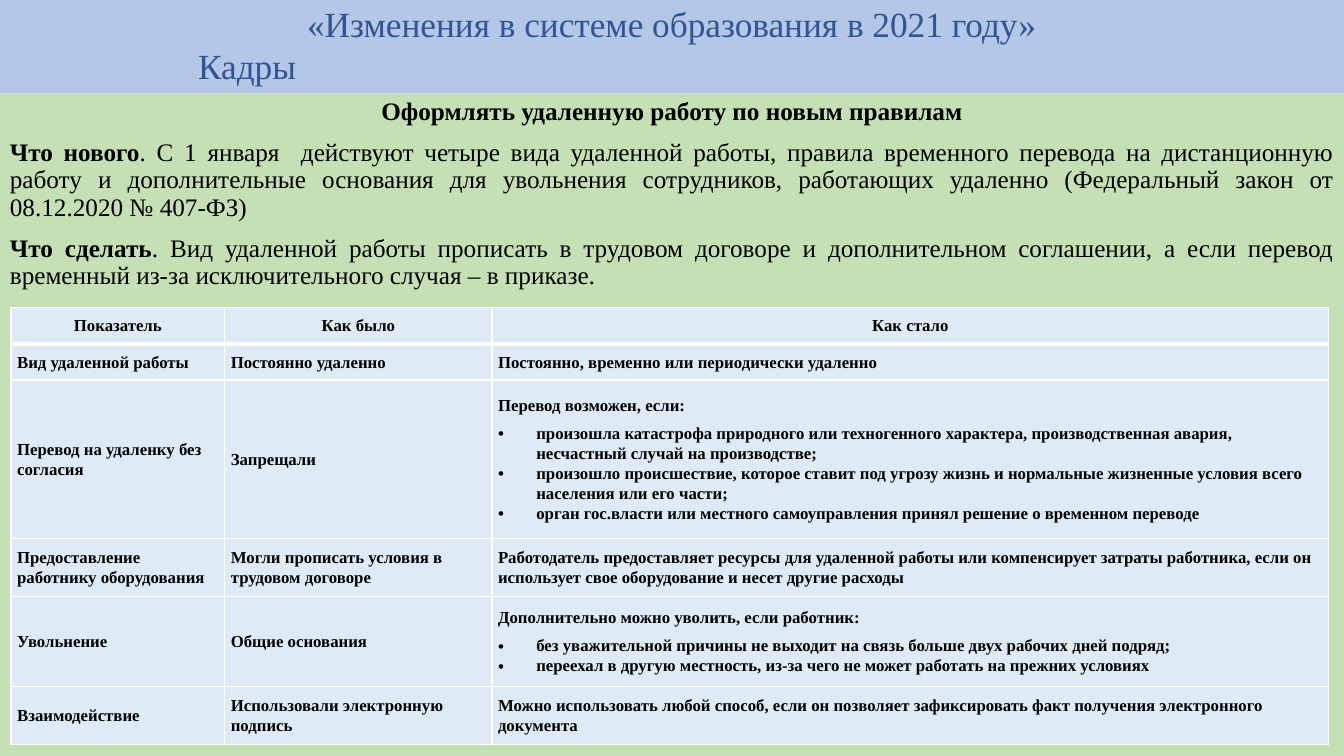
from lxml import etree
from pptx import Presentation
from pptx.dml.color import RGBColor
from pptx.enum.shapes import MSO_SHAPE
from pptx.enum.text import MSO_ANCHOR, PP_ALIGN
from pptx.oxml.ns import qn
from pptx.util import Inches, Pt

RECT = MSO_SHAPE.RECTANGLE
TOP, MIDDLE = MSO_ANCHOR.TOP, MSO_ANCHOR.MIDDLE
LEFT, CENTER, JUSTIFY = PP_ALIGN.LEFT, PP_ALIGN.CENTER, PP_ALIGN.JUSTIFY

FACE = "Times New Roman"
BLUE = RGBColor(0xB4, 0xC7, 0xE7)
NAVY = RGBColor(0x2F, 0x55, 0x97)
GREEN = RGBColor(0xC5, 0xE0, 0xB4)
PALE = RGBColor(0xDE, 0xEB, 0xF7)
WHITE = RGBColor(0xFF, 0xFF, 0xFF)
BLACK = RGBColor(0, 0, 0)

WIDE, HIGH = 13.33, 7.5
HEAD = 0.93  # bottom of the title band
COLS = [2.12, 2.65, 8.3]
ROWS = [0.36, 0.36, 1.57, 0.58, 0.89, 0.58]

TITLE = "«Изменения в системе образования в 2021 году»"
TOPIC = "Кадры"
RULE = "Оформлять удаленную работу по новым правилам"
NOTES = [
    ("Что нового", ". С 1 января  действуют четыре вида удаленной работы, правила "
     "временного перевода на дистанционную работу и дополнительные основания для "
     "увольнения сотрудников, работающих удаленно (Федеральный закон от "
     "08.12.2020 № 407-ФЗ)"),
    ("Что сделать", ". Вид удаленной работы прописать в трудовом договоре и "
     "дополнительном соглашении, а если перевод временный из-за исключительного "
     "случая – в приказе."),
]
# Each cell is a list: a lead line, then its bullets
CELLS = [
    [["Показатель"], ["Как было"], ["Как стало"]],
    [["Вид удаленной работы"], ["Постоянно удаленно"],
     ["Постоянно, временно или периодически удаленно"]],
    [["Перевод на удаленку без согласия"], ["Запрещали"],
     ["Перевод возможен, если:",
      "произошла катастрофа природного или техногенного характера, "
      "производственная авария, несчастный случай на производстве;",
      "произошло происшествие, которое ставит под угрозу жизнь и нормальные "
      "жизненные условия всего населения или его части;",
      "орган гос.власти или местного самоуправления принял решение о временном "
      "переводе"]],
    [["Предоставление работнику оборудования"],
     ["Могли прописать условия в трудовом договоре"],
     ["Работодатель предоставляет ресурсы для удаленной работы или компенсирует "
      "затраты работника, если он использует свое оборудование и несет другие "
      "расходы"]],
    [["Увольнение"], ["Общие основания"],
     ["Дополнительно можно уволить, если работник:",
      "без уважительной причины не выходит на связь больше двух рабочих дней подряд;",
      "переехал в другую местность, из-за чего не может работать на прежних условиях"]],
    [["Взаимодействие"], ["Использовали электронную подпись"],
     ["Можно использовать любой способ, если он позволяет зафиксировать факт "
      "получения электронного документа"]],
]


def style(para, size, color, align, bold=None):
    para.alignment = align
    font = para.font
    font.name, font.size, font.bold = FACE, Pt(size), bold
    font.color.rgb = color


def add_band(slide, box, fill, anchor):
    band = slide.shapes.add_shape(RECT, *map(Inches, box))
    band.shadow.inherit = False
    band.fill.solid()
    band.fill.fore_color.rgb = fill
    band.line.fill.background()
    frame = band.text_frame
    frame.word_wrap = True
    frame.vertical_anchor = anchor
    return frame


def add_title(slide, box):
    frame = add_band(slide, box, BLUE, MIDDLE)
    first, second = frame.paragraphs[0], frame.add_paragraph()
    first.text, second.text = TITLE, TOPIC
    style(first, 25.2, NAVY, CENTER)
    style(second, 25.2, NAVY, LEFT)
    second._p.get_or_add_pPr().set("marL", str(Inches(box[2] * 0.14)))


def add_body(slide, box):
    frame = add_band(slide, box, GREEN, TOP)
    head = frame.paragraphs[0]
    head.text = RULE
    style(head, 18, BLACK, CENTER, True)
    for lead, rest in NOTES:
        para = frame.add_paragraph()
        style(para, 18, BLACK, JUSTIFY)
        for text, bold in ((lead, True), (rest, False)):
            run = para.add_run()
            run.text, run.font.bold = text, bold
    for para in frame.paragraphs:
        para.line_spacing = 0.9
        para.space_before = Pt(10)


def add_bullet(para):
    props = para._p.get_or_add_pPr()
    props.set("marL", str(Inches(0.38)))
    props.set("indent", str(Inches(-0.38)))
    etree.SubElement(props, qn("a:buFont")).set("typeface", "Arial")
    etree.SubElement(props, qn("a:buChar")).set("char", "•")


def add_edges(cell, top, base):
    props = cell._tc.get_or_add_tcPr()
    sides = (("L", 1), ("R", 1), ("T", top), ("B", base))
    for spot, (side, width) in enumerate(sides):
        line = etree.Element(qn("a:ln" + side), w=str(Pt(width)))
        fill = etree.SubElement(line, qn("a:solidFill"))
        etree.SubElement(fill, qn("a:srgbClr")).set("val", str(WHITE))
        props.insert(spot, line)


def fill_cell(cell, lines, align):
    cell.fill.solid()
    cell.fill.fore_color.rgb = PALE
    cell.vertical_anchor = MIDDLE
    cell.margin_left = cell.margin_right = Inches(0.06)
    cell.margin_top = cell.margin_bottom = Inches(0.06)
    frame = cell.text_frame
    for spot, text in enumerate(lines):
        para = frame.add_paragraph() if spot else frame.paragraphs[0]
        para.text = text
        para.line_spacing = 1.07
        para.space_after = Pt(0 if spot else 6)
        if spot:
            add_bullet(para)
        style(para, 12, BLACK, align, True)


def add_grid(slide, left, top):
    box = map(Inches, (left, top, sum(COLS), sum(ROWS)))
    table = slide.shapes.add_table(len(ROWS), len(COLS), *box).table
    for col, width in zip(table.columns, COLS):
        col.width = Inches(width)
    for row, height in zip(table.rows, ROWS):
        row.height = Inches(height)
    for r, row in enumerate(CELLS):
        for c, lines in enumerate(row):
            cell = table.cell(r, c)
            fill_cell(cell, lines, LEFT if r else CENTER)
            # Thick rule below the header row
            add_edges(cell, 3 if r == 1 else 1, 1 if r else 3)


def main():
    deck = Presentation()
    deck.slide_width, deck.slide_height = Inches(WIDE), Inches(HIGH)
    slide = deck.slides.add_slide(deck.slide_layouts[6])
    add_title(slide, (0, -0.05, WIDE, HEAD + 0.05))
    add_body(slide, (0, HEAD, WIDE, HIGH - HEAD))
    add_grid(slide, 0.11, 3.05)
    deck.save("out.pptx")


if __name__ == "__main__":
    main()
